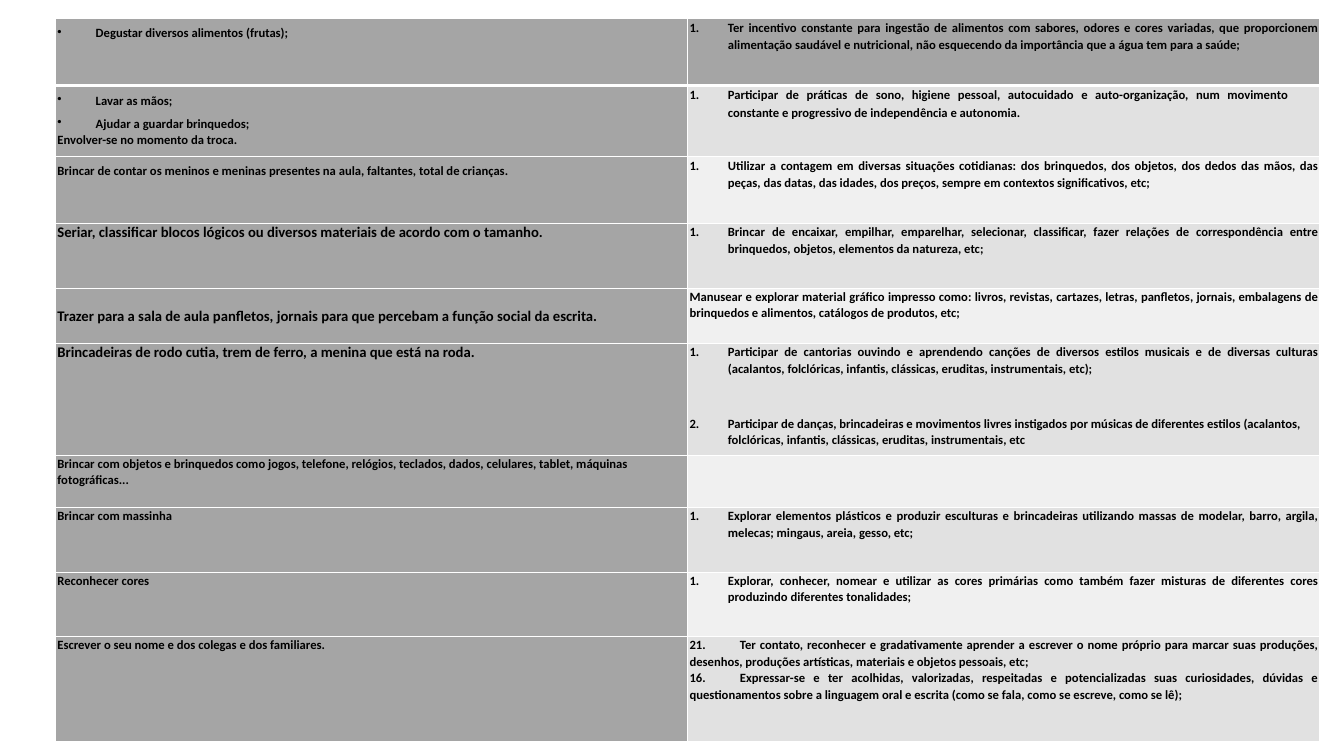
from dataclasses import dataclass
from lxml.etree import SubElement
from pptx import Presentation
from pptx.dml.color import RGBColor
from pptx.enum.text import MSO_ANCHOR, PP_ALIGN
from pptx.oxml.ns import qn
from pptx.util import Inches, Pt


@dataclass(frozen=True)
class Theme:
    face: str = "Calibri"
    ink: str = "000000"
    rule: str = "FFFFFF"
    dark: str = "A5A5A5"
    bands: tuple = ("F0F0F0", "E1E1E1")
    small: float = 9
    large: float = 10.5
    thin: float = 1
    thick: float = 3


THEME = Theme()
HEIGHTS = (0.67, 0.7, 0.67, 0.64, 0.55, 1.11, 0.52, 0.64, 0.64, 1.04)
FLUSH = {"alignment": PP_ALIGN.JUSTIFY}


def para(text, mark=None, size=THEME.small, right=0, **form):
    return text, mark, size, right, {"line_spacing": 1.07, **form}


def dot(text):
    return para(text, "dot", line_spacing=1.5)


def item(text, lead=1.07, **form):
    return para(text, "num", **{**FLUSH, "line_spacing": lead, "space_after": Pt(8), **form})


def title(text, lead=1.0):
    return para(text, size=THEME.large, line_spacing=lead)


ROWS = (
    ([dot("Degustar diversos alimentos (frutas);")],
     [item("Ter incentivo constante para ingestão de alimentos com sabores, odores e cores variadas, que proporcionem alimentação saudável e nutricional, não esquecendo da importância que a água tem para a saúde;", 1.15)]),
    ([dot("Lavar as mãos;"),
      dot("Ajudar a guardar brinquedos;"),
      para("Envolver-se no momento da troca.")],
     [item("Participar de práticas de sono, higiene pessoal, autocuidado e auto-organização, num movimento constante e progressivo de independência e autonomia.", 1.15, right=0.3)]),
    ([para("Brincar de contar os meninos e meninas presentes na aula, faltantes, total de crianças.", line_spacing=1.5)],
     [item("Utilizar a contagem em diversas situações cotidianas: dos brinquedos, dos objetos, dos dedos das mãos, das peças, das datas, das idades, dos preços, sempre em contextos significativos, etc;", 1.15)]),
    ([title("Seriar, classificar blocos lógicos ou diversos materiais de acordo com o tamanho.")],
     [item("Brincar de encaixar, empilhar, emparelhar, selecionar, classificar, fazer relações de correspondência entre brinquedos, objetos, elementos da natureza, etc;")]),
    ([title("Trazer para a sala de aula panfletos, jornais para que percebam a função social da escrita.", 1.07)],
     [para("Manusear e explorar material gráfico impresso como: livros, revistas, cartazes, letras, panfletos, jornais, embalagens de brinquedos e alimentos, catálogos de produtos, etc;", **FLUSH)]),
    ([title("Brincadeiras de rodo cutia, trem de ferro, a menina que está na roda.")],
     [item("Participar de cantorias ouvindo e aprendendo canções de diversos estilos musicais e de diversas culturas (acalantos, folclóricas, infantis, clássicas, eruditas, instrumentais, etc);"),
      item("Participar de danças, brincadeiras e movimentos livres instigados por músicas de diferentes estilos (acalantos, folclóricas, infantis, clássicas, eruditas, instrumentais, etc",
           1.06, alignment=PP_ALIGN.LEFT, space_before=Pt(20))]),
    ([para("Brincar com objetos e brinquedos como jogos, telefone, relógios, teclados, dados, celulares, tablet, máquinas fotográficas...")],
     []),
    ([para("Brincar com massinha")],
     [item("Explorar elementos plásticos e produzir esculturas e brincadeiras utilizando massas de modelar, barro, argila, melecas; mingaus, areia, gesso, etc;")]),
    ([para("Reconhecer cores")],
     [item("Explorar, conhecer, nomear e utilizar as cores primárias como também fazer misturas de diferentes cores produzindo diferentes tonalidades;")]),
    ([para("Escrever o seu nome e dos colegas e dos familiares.")],
     [para("21.\tTer contato, reconhecer e gradativamente aprender a escrever o nome próprio para marcar suas produções, desenhos, produções artísticas, materiais e objetos pessoais, etc;", **FLUSH),
      para("16.\tExpressar-se e ter acolhidas, valorizadas, respeitadas e potencializadas suas curiosidades, dúvidas e questionamentos sobre a linguagem oral e escrita (como se fala, como se escreve, como se lê);", **FLUSH)]),
)


def apply(thing, form):
    for name, value in form.items():
        setattr(thing, name, value)


def add_mark(line, mark):
    props = line._p.get_or_add_pPr()
    props.set("marL", str(Inches(0.38)))
    props.set("indent", str(-Inches(0.38)))
    if mark == "dot":
        SubElement(props, qn("a:buChar"), char="•")
    else:
        SubElement(props, qn("a:buAutoNum"), type="arabicPeriod")


def write(frame, paras):
    for spot, (text, mark, size, right, form) in enumerate(paras):
        line = frame.add_paragraph() if spot else frame.paragraphs[0]
        apply(line, form)
        if right:
            line._p.get_or_add_pPr().set("marR", str(Inches(right)))
        if mark:
            add_mark(line, mark)
        run = line.add_run()
        run.text = text
        apply(run.font, {"name": THEME.face, "size": Pt(size), "bold": True})
        run.font.color.rgb = RGBColor.from_string(THEME.ink)


def add_rules(cell, widths):
    props = cell._tc.get_or_add_tcPr()
    for side, width in widths.items():
        edge = SubElement(props, qn(f"a:ln{side}"), w=str(Pt(width)))
        fill = SubElement(edge, qn("a:solidFill"))
        SubElement(fill, qn("a:srgbClr"), val=THEME.rule)


def style(cell, shade, widths):
    add_rules(cell, widths)
    cell.fill.solid()
    cell.fill.fore_color.rgb = RGBColor.from_string(shade)
    apply(cell, {"margin_left": Inches(0.02), "margin_right": Inches(0.02),
                 "margin_top": 0, "margin_bottom": 0})


def add_grid(slide):
    grid = slide.shapes.add_table(len(ROWS), 2, Inches(0.55), Inches(0.18),
                                  Inches(12.54), Inches(sum(HEIGHTS))).table
    apply(grid, {"first_row": False, "horz_banding": False})
    for row, (pair, height) in enumerate(zip(ROWS, HEIGHTS)):
        grid.rows[row].height = Inches(height)
        widths = {side: THEME.thin for side in "LRTB"}
        if row == 0:
            widths["B"] = THEME.thick
        elif row == 1:
            widths["T"] = THEME.thick
        for col, paras in enumerate(pair):
            cell = grid.cell(row, col)
            shade = THEME.bands[row % 2] if row and col else THEME.dark
            style(cell, shade, widths)
            write(cell.text_frame, paras)
    grid.cell(4, 0).vertical_anchor = MSO_ANCHOR.MIDDLE


def main():
    deck = Presentation()
    apply(deck, {"slide_width": Inches(13.33), "slide_height": Inches(7.5)})
    add_grid(deck.slides.add_slide(deck.slide_layouts[6]))
    deck.save("out.pptx")


if __name__ == "__main__":
    main()
